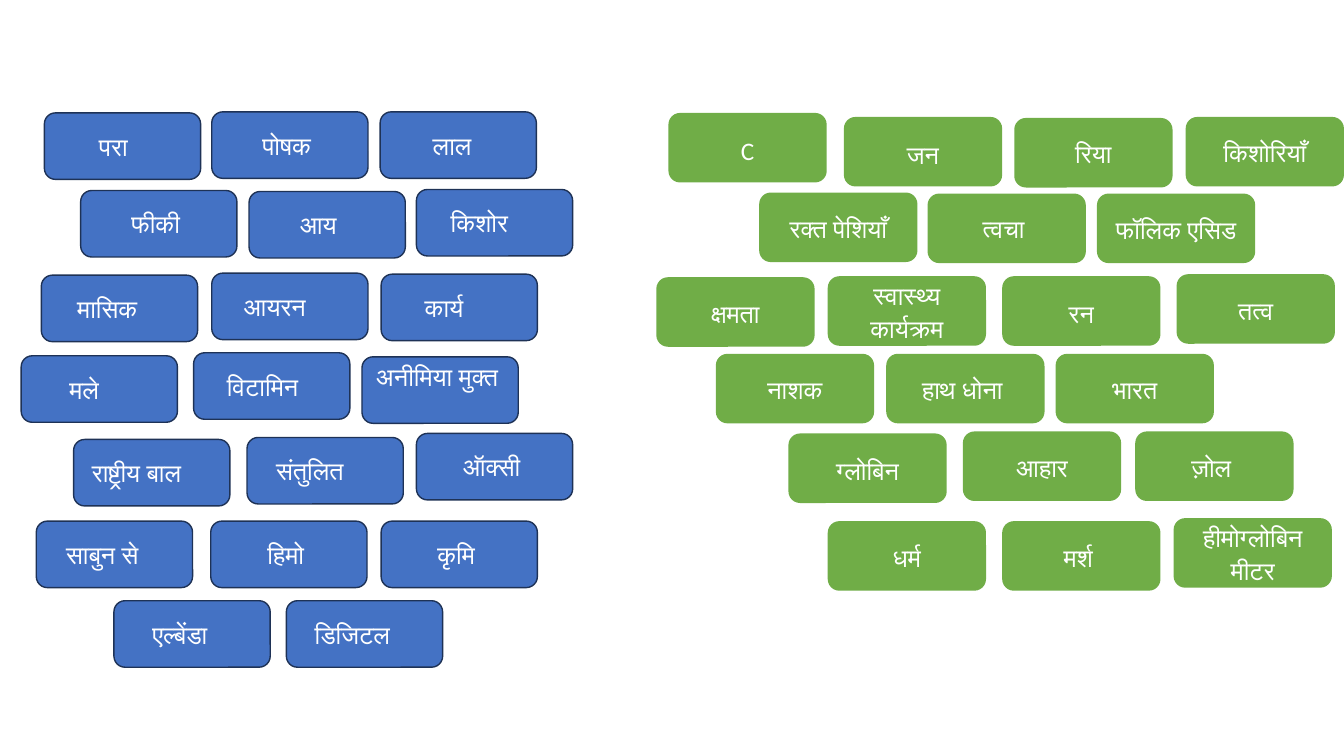
from pptx import Presentation
from pptx.dml.color import RGBColor as Rgb
from pptx.enum.shapes import MSO_SHAPE as Geo
from pptx.enum.text import MSO_ANCHOR as Anchor, PP_ALIGN as Align
from pptx.util import Pt

PX = 9144
INSET = 10
SPACE = 6
COLORS = {"blue": "4472C4", "edge": "1E3256", "green": "70AD47", "white": "FFFFFF"}

STARTS = [
    (24, 2, "परा", {"pad": 3}), (190, 1, "पोषक", {"pad": 1}),
    (357, 1, "लाल", {"pad": 2}),
    (60, 79, "फीकी", {"pad": 1}), (227, 80, "आय", {"pad": 3}),
    (393, 78, "किशोर", {"pad": 5}),
    (21, 163, "मासिक", {"pad": 4}), (190, 161, "आयरन", {"pad": 5}),
    (358, 162, "कार्य", {"pad": 5}),
    (1, 243, "मले", {"pad": 5}), (172, 240, "विटामिन", {"pad": 3}),
    (339, 244, "अनीमिया मुक्त", {"pad": 1, "foot": 32}),
    (53, 326, "राष्ट्रीय बाल", {"pad": 5}), (225, 324, "संतुलित", {"pad": 5}),
    (393, 320, "ऑक्सी", {"pad": 1}),
    (16, 407, "साबुन से", {"pad": 4}), (189, 407, "हिमो", {"pad": 1}),
    (358, 407, "कृमि", {"pad": 1}),
    (93, 486, "एल्बेंडा", {"pad": 4}), (264, 486, "डिजिटल", {"pad": 4}),
]
ENDS = [
    (13, 2, "C", {"lead": 1.15}), (187, 6, "जन", {"lead": 1.15}),
    (356, 7, "रिया", {}), (526, 6, "किशोरियाँ", {}),
    (103, 81, "रक्त पेशियाँ", {}), (270, 82, "त्वचा", {"lead": 1.0, "pad": 1}),
    (438, 82, "फॉलिक एसिड", {}),
    (1, 165, "क्षमता", {}), (171, 164, "स्वास्थ्य कार्यक्रम", {}),
    (344, 164, "रन", {"lead": 1.15}), (517, 162, "तत्व", {}),
    (60, 241, "नाशक", {}),
    (229, 241, "हाथ धोना", {"pad": 1, "face": "Times New Roman"}),
    (397, 241, "भारत", {}),
    (132, 320, "ग्लोबिन", {"lead": 1.15}), (305, 318, "आहार", {}),
    (476, 318, "ज़ोल", {"pad": 1}),
    (171, 407, "धर्म", {}), (344, 407, "मर्श", {"pad": 1}),
    (514, 404, "हीमोग्लोबिन मीटर", {}),
]


def color(name):
    """Return the named colour."""
    return Rgb.from_string(COLORS[name])


def apply(item, form):
    """Set each format value on the item."""
    for key, value in form.items():
        setattr(item, key, value)


def add_tile(slide, box, text, fill, edge=None, lead=1.0, pad=0, foot=5, face="Calibri"):
    """Draw one rounded word tile in the box."""
    tile = slide.shapes.add_shape(Geo.ROUNDED_RECTANGLE, *(n * PX for n in box))
    tile.shadow.inherit = False
    tile.fill.solid()
    tile.fill.fore_color.rgb = color(fill)
    if edge:
        tile.line.color.rgb = color(edge)
        tile.line.width = Pt(1)
    else:
        tile.line.fill.background()
    frame = tile.text_frame
    apply(frame, {
        "word_wrap": True,
        "vertical_anchor": Anchor.MIDDLE,
        "margin_left": INSET * PX,
        "margin_right": (INSET + pad * SPACE) * PX,
        "margin_top": 5 * PX,
        "margin_bottom": foot * PX,
    })
    para = frame.paragraphs[0]
    apply(para, {"alignment": Align.CENTER, "line_spacing": lead})
    run = para.add_run()
    run.text = text
    apply(run.font, {"name": face, "size": Pt(18)})
    run.font.color.rgb = color("white")


def add_words(slide, box, tiles, size, form):
    """Scatter the word tiles of one group inside its box."""
    left, top = box
    for x, y, text, extra in tiles:
        add_tile(slide, (left + x, top + y, *size), text, **{**form, **extra})


def main():
    """Build the word matching slide."""
    deck = Presentation()
    apply(deck, {"slide_width": 1333 * PX, "slide_height": 750 * PX})
    slide = deck.slides.add_slide(deck.slide_layouts[6])
    add_words(slide, (650, 110), ENDS, (157, 69), {"fill": "green", "lead": 1.07})
    add_words(slide, (20, 110), STARTS, (155, 66), {"fill": "blue", "edge": "edge"})
    deck.save("out.pptx")


if __name__ == "__main__":
    main()
